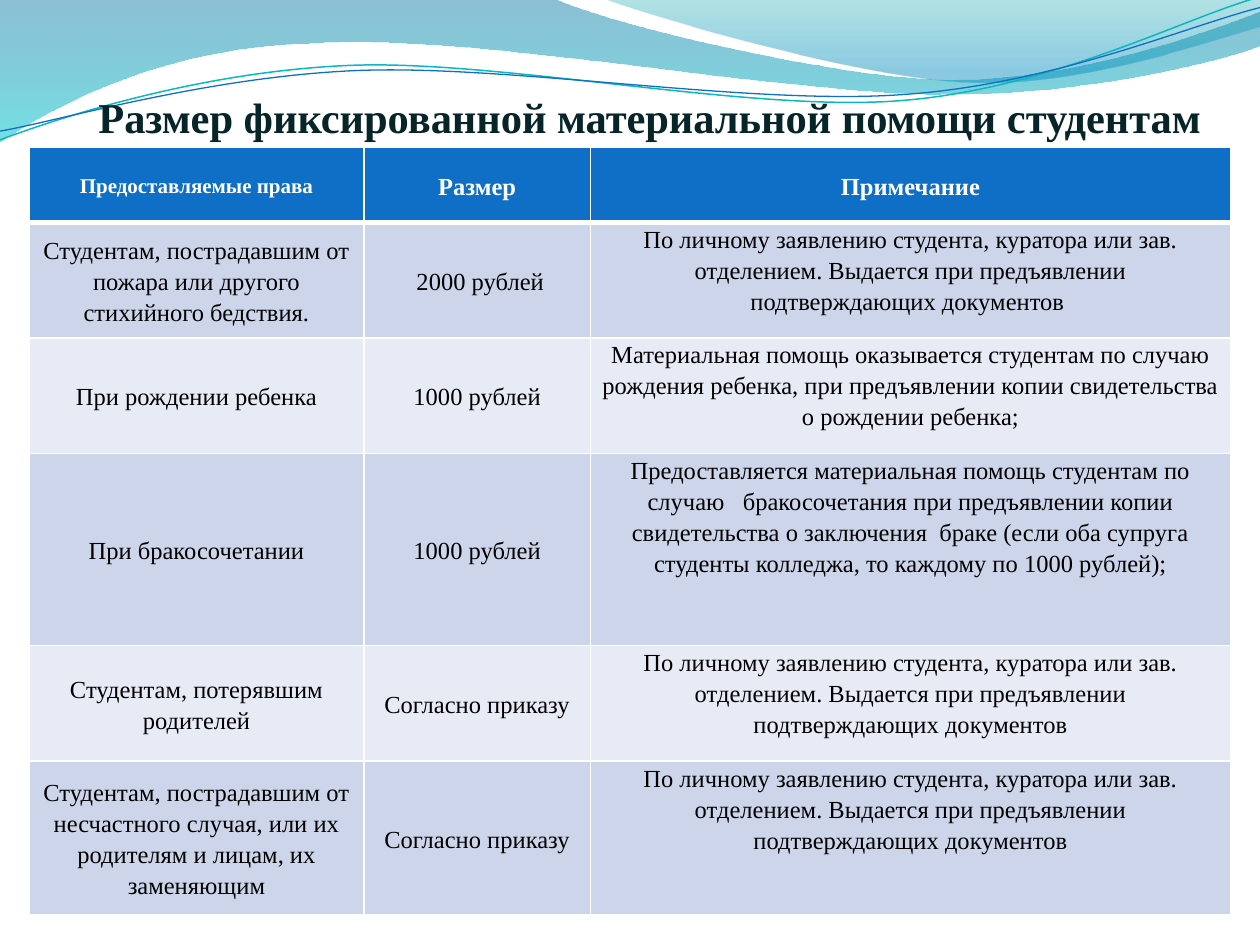
from dataclasses import dataclass
from math import cos, radians, sin

from lxml.etree import SubElement
from pptx import Presentation
from pptx.dml.color import RGBColor
from pptx.enum.text import MSO_ANCHOR, MSO_AUTO_SIZE, PP_ALIGN
from pptx.oxml.ns import qn
from pptx.util import Pt


@dataclass(frozen=True)
class Theme:
    """Colours, font and type sizes of the deck."""
    font: str = "Times New Roman"
    title_size: float = 24.3
    small_size: float = 12
    text_size: float = 14
    title_space: str = "0070C0"
    title: str = "072428"
    header: str = "0F6FC6"
    bands: tuple = ("CCD5EA", "E7EBF5")
    white: str = "FFFFFF"
    black: str = "000000"
    lower_wave: tuple = ((0, "0074A1", 45), (1, "00C6CF", 55))
    upper_wave: tuple = ((0, "00A1A9", 30), (0.8, "008BBF", 45))
    teal_line: str = "0AB8BF"
    blue_line: str = "0F6FC6"


@dataclass(frozen=True)
class Box:
    """A region of the page in points."""
    left: float
    top: float
    width: float
    height: float


THEME = Theme()
LINE_TILT = 357.3
LINE_CENTRE = (359.3, 42)

LOWER_WAVE = [(0, 0), (316.8, -0.7), (342.7, 12.2, 478.1, 45.4, 545.8, 45.4),
              (614.2, 45.4, 689.8, 18.7, 720, 6.5), (720.7, 25.9),
              (707.8, 31.7, 626.4, 54.7, 537.1, 54),
              (447.8, 54, 275, 20.2, 185, 24.5),
              (92.9, 25.9, 33.1, 59.8, -0.7, 81.4), (0, 0)]
UPPER_WAVE = [(344.9, -0.7), (366.5, 7.9, 491, 44.6, 553.7, 46.8),
              (616.3, 49.7, 691.9, 23, 720, 15.1), (720, 0), (344.9, -0.7)]
TEAL_LINE = [(0, 79.9), (34.6, 67, 113.8, 41, 199.4, 37.4),
             (284.4, 33.8, 427, 64.1, 513.4, 57.6),
             (599.8, 51.1, 675.4, 10.8, 718.6, -1.4)]
BLUE_LINE = [(0, 74.9), (33.8, 69.1, 118.1, 43.9, 203.8, 40.3),
             (290.2, 36.7, 429.8, 60.5, 516.2, 54),
             (601.9, 48.2, 677.5, 15.1, 720, 4.3)]

COLUMNS = (191.4, 129.3, 366)
ROW_HEIGHTS = (42.8, 66.1, 66.1, 109.8, 66.1, 87.6)
ON_REQUEST = ("По личному заявлению студента, куратора или зав. отделением. "
              "Выдается при предъявлении подтверждающих документов")
ROWS = (
    ("Предоставляемые права", "Размер", "Примечание"),
    ("Студентам, пострадавшим от пожара или другого стихийного бедствия.",
     " 2000 рублей", ON_REQUEST + " "),
    ("При рождении ребенка", "1000 рублей",
     "Материальная помощь оказывается студентам по случаю рождения ребенка, "
     "при предъявлении копии свидетельства о рождении ребенка;"),
    ("При бракосочетании", "1000 рублей",
     "Предоставляется материальная помощь студентам по случаю   бракосочетания "
     "при предъявлении копии свидетельства о заключения  браке (если оба "
     "супруга студенты колледжа, то каждому по 1000 рублей);"),
    ("Студентам, потерявшим родителей", "Согласно приказу", ON_REQUEST),
    ("Студентам, пострадавшим от несчастного случая, или их родителям и лицам, "
     "их заменяющим", "Согласно приказу", ON_REQUEST),
)


def add_span(para, text, size, color, bold=False):
    """Add one formatted run to a paragraph."""
    span = para.add_run()
    span.text = text
    span.font.name = THEME.font
    span.font.size = Pt(size)
    span.font.bold = bold
    span.font.color.rgb = RGBColor.from_string(color)


def split_points(segments):
    """List the end and control points of all segments."""
    return [pair for segment in segments for pair in zip(segment[::2], segment[1::2])]


def level(points):
    """Turn points back by the tilt of the thin lines."""
    angle = radians(-LINE_TILT)
    centre_x, centre_y = LINE_CENTRE
    return [(centre_x + (x - centre_x) * cos(angle) - (y - centre_y) * sin(angle),
             centre_y + (x - centre_x) * sin(angle) + (y - centre_y) * cos(angle))
            for x, y in points]


def bend(outline, segments):
    """Join each three straight steps of a cubic segment into one curve."""
    steps = iter(list(outline.element.iter(qn("a:lnTo"))))
    for segment in segments[1:]:
        step = next(steps)
        if len(segment) == 6:
            step.tag = qn("a:cubicBezTo")
            for _ in range(2):
                extra = next(steps)
                step.append(extra[0])
                extra.getparent().remove(extra)


def add_outline(page, box, segments, points, close):
    """Draw segments relative to the box as a curved freeform."""
    placed = [(Pt(box.left + x), Pt(box.top + y)) for x, y in points]
    builder = page.shapes.build_freeform(*placed[0], scale=1.0)
    builder.add_line_segments(placed[1:], close=close)
    outline = builder.convert_to_shape()
    outline.shadow.inherit = False
    bend(outline, segments)
    return outline


def add_wave(page, box, segments, stops):
    """Add a wave with a translucent vertical gradient."""
    wave = add_outline(page, box, segments, split_points(segments), True)
    wave.line.fill.background()
    wave.fill.gradient()
    wave.fill.gradient_angle = 270
    for stop, (position, color, _) in zip(wave.fill.gradient_stops, stops):
        stop.position = position
        stop.color.rgb = RGBColor.from_string(color)
    for node, (_, _, opacity) in zip(wave.element.iter(qn("a:srgbClr")), stops):
        SubElement(node, qn("a:alpha"), val=str(opacity * 1000))


def add_thin_line(page, box, segments, color, width):
    """Add a tilted thin curve."""
    curve = add_outline(page, box, segments, level(split_points(segments)), False)
    curve.rotation = LINE_TILT
    curve.fill.background()
    curve.line.color.rgb = RGBColor.from_string(color)
    curve.line.width = Pt(width)


def add_waves(page, box):
    """Add the decoration along the top of the page."""
    add_wave(page, box, LOWER_WAVE, THEME.lower_wave)
    add_wave(page, box, UPPER_WAVE, THEME.upper_wave)
    add_thin_line(page, box, TEAL_LINE, THEME.teal_line, 0.85)
    add_thin_line(page, box, BLUE_LINE, THEME.blue_line, 0.75)


def place_title(page, box):
    """Move the title placeholder into the box, in front of the waves."""
    title = page.shapes.title
    page.shapes.element.append(title.element)
    title.left, title.top = Pt(box.left), Pt(box.top)
    title.width, title.height = Pt(box.width), Pt(box.height)
    frame = title.text_frame
    frame.word_wrap = True
    frame.auto_size = MSO_AUTO_SIZE.NONE
    frame.vertical_anchor = MSO_ANCHOR.BOTTOM
    frame.margin_left = frame.margin_right = Pt(0)
    frame.margin_top, frame.margin_bottom = Pt(3.6), Pt(53.7)
    para = frame.paragraphs[0]
    para.alignment = PP_ALIGN.CENTER
    add_span(para, " ", THEME.title_size, THEME.title_space, True)
    add_span(para, "Размер фиксированной материальной помощи студентам",
             THEME.title_size, THEME.title, True)


def add_borders(cell, widths):
    """Give a cell white borders ahead of its fill."""
    properties = cell._tc.get_or_add_tcPr()
    for index, (side, width) in enumerate(widths.items()):
        border = SubElement(properties, qn(f"a:ln{side}"), w=str(Pt(width)))
        fill = SubElement(border, qn("a:solidFill"))
        SubElement(fill, qn("a:srgbClr"), val=THEME.white)
        properties.insert(index, border)


def fill_cell(cell, text, row, column):
    """Write and format one table cell."""
    header = row == 0
    cell.margin_left = cell.margin_right = Pt(5)
    cell.margin_top = cell.margin_bottom = Pt(0)
    top_aligned = column == 2 and not header
    cell.vertical_anchor = MSO_ANCHOR.TOP if top_aligned else MSO_ANCHOR.MIDDLE
    cell.fill.solid()
    color = THEME.header if header else THEME.bands[(row - 1) % 2]
    cell.fill.fore_color.rgb = RGBColor.from_string(color)
    add_borders(cell, {"L": 1, "R": 1, "T": 3 if row == 1 else 1, "B": 3 if header else 1})
    para = cell.text_frame.paragraphs[0]
    para.alignment = PP_ALIGN.CENTER
    para.line_spacing = 1.15
    size = THEME.small_size if header and column == 0 else THEME.text_size
    add_span(para, text, size, THEME.white if header else THEME.black, header)


def add_aid_table(page, box):
    """Add the table of payments."""
    table = page.shapes.add_table(len(ROWS), len(COLUMNS), Pt(box.left), Pt(box.top),
                                  Pt(box.width), Pt(box.height)).table
    for column, width in zip(table.columns, COLUMNS):
        column.width = Pt(width)
    for row, (height, texts) in enumerate(zip(ROW_HEIGHTS, ROWS)):
        table.rows[row].height = Pt(height)
        for column, text in enumerate(texts):
            fill_cell(table.cell(row, column), text, row, column)


def main():
    """Build and save the deck."""
    deck = Presentation()
    deck.slide_width, deck.slide_height = Pt(720), Pt(540)
    page = deck.slides.add_slide(deck.slide_layouts[5])
    add_waves(page, Box(0, 0, 720, 82))
    place_title(page, Box(16.6, 21.6, 703.4, 113))
    add_aid_table(page, Box(16.6, 84.2, sum(COLUMNS), sum(ROW_HEIGHTS)))
    deck.save("out.pptx")


if __name__ == "__main__":
    main()
